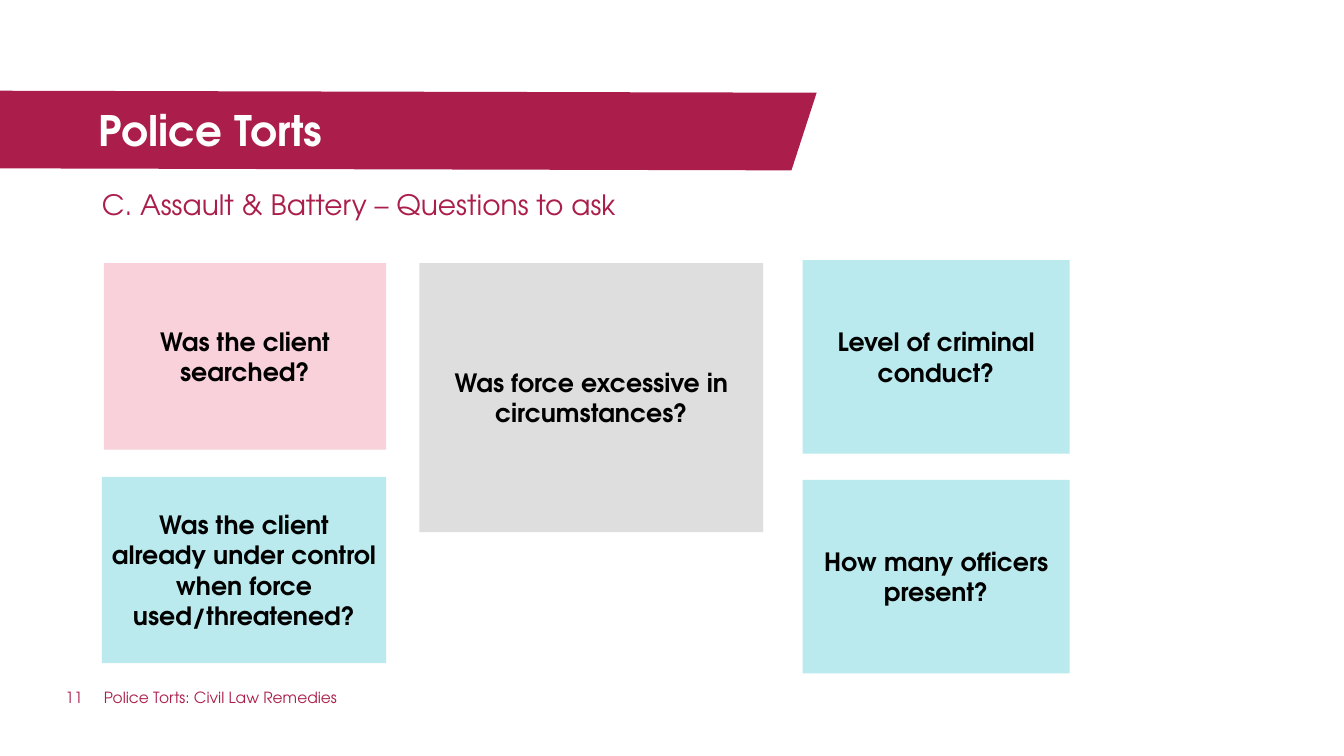
from dataclasses import dataclass

from pptx import Presentation
from pptx.dml.color import RGBColor
from pptx.enum import shapes, text
from pptx.util import Inches, Pt


@dataclass(frozen=True)
class Theme:
    font: str = "TeX Gyre Adventor"
    crimson: str = "AB1E4B"
    white: str = "FFFFFF"
    black: str = "000000"
    pink: str = "F8D1DA"
    aqua: str = "BAEAEE"
    grey: str = "DEDEDE"
    title_size: int = 30
    subtitle_size: int = 20
    card_size: int = 18
    footer_size: int = 11


@dataclass(frozen=True)
class Area:
    left: float
    top: float
    width: float
    height: float

    def lengths(self) -> list:
        return [Inches(n) for n in (self.left, self.top, self.width, self.height)]


@dataclass(frozen=True)
class Card:
    question: str
    area: Area
    fill: str


@dataclass(frozen=True)
class Footer:
    wording: str
    area: Area


THEME = Theme()
BAND = [(0, 0.9), (8.1, 0.92), (7.85, 1.69), (0, 1.67)]
TITLE_AREA = Area(0.98, 1.04, 6.82, 0.49)
SUBTITLE_AREA = Area(1.01, 1.79, 10.87, 0.47)
FOOTERS = [
    Footer("11", Area(0.65, 6.83, 0.37, 0.35)),
    Footer("Police Torts: Civil Law Remedies", Area(1.03, 6.83, 6.14, 0.35)),
]
CARDS = [
    Card("Was the client searched?", Area(1.03, 2.61, 2.8, 1.85), THEME.pink),
    Card("Level of criminal conduct?", Area(7.96, 2.58, 2.65, 1.92), THEME.aqua),
    Card("Was force excessive in circumstances?", Area(4.16, 2.61, 3.41, 2.67), THEME.grey),
    Card("Was the client already under control when force used/threatened?",
         Area(1.01, 4.73, 2.82, 1.85), THEME.aqua),
    Card("How many officers present?", Area(7.96, 4.76, 2.65, 1.92), THEME.aqua),
]


def place(shape, area: Area) -> None:
    shape.left, shape.top, shape.width, shape.height = area.lengths()


def paint(shape, colour: str) -> None:
    """Give a shape a flat fill with no outline or shadow."""
    shape.shadow.inherit = False
    shape.fill.solid()
    shape.fill.fore_color.rgb = RGBColor.from_string(colour)
    shape.line.fill.background()


def write(shape, wording: str, size: int, colour: str, bold: bool = False,
          align=text.PP_ALIGN.LEFT, anchor=text.MSO_ANCHOR.TOP, margin=None):
    """Fill a shape with one formatted paragraph and return the paragraph."""
    frame = shape.text_frame
    frame_format = {"word_wrap": True, "auto_size": text.MSO_AUTO_SIZE.NONE,
                    "vertical_anchor": anchor}
    if margin is not None:
        for side in ("left", "top", "right", "bottom"):
            frame_format[f"margin_{side}"] = Inches(margin)
    for name, value in frame_format.items():
        setattr(frame, name, value)
    para = frame.paragraphs[0]
    para.alignment = align
    span = para.add_run()
    span.text = wording
    for name, value in {"name": THEME.font, "size": Pt(size), "bold": bold}.items():
        setattr(span.font, name, value)
    span.font.color.rgb = RGBColor.from_string(colour)
    return para


def add_headings(page) -> None:
    title, subtitle = page.shapes.title, page.placeholders[1]
    place(title, TITLE_AREA)
    para = write(title, "Police Torts", THEME.title_size, THEME.white, bold=True,
                 anchor=text.MSO_ANCHOR.MIDDLE, margin=0)
    para.line_spacing = 1.0
    place(subtitle, SUBTITLE_AREA)
    para = write(subtitle, "C. Assault & Battery – Questions to ask",
                 THEME.subtitle_size, THEME.crimson, margin=0)
    para_format = {"line_spacing": 1.2, "space_before": Pt(0), "space_after": Pt(2)}
    for name, value in para_format.items():
        setattr(para, name, value)


def add_band(page) -> None:
    """Draw the slanted band behind the title."""
    start, *corners = [(Inches(x), Inches(y)) for x, y in BAND]
    builder = page.shapes.build_freeform(*start)
    builder.add_line_segments(corners, close=True)
    band = builder.convert_to_shape()
    paint(band, THEME.crimson)
    page.shapes.title.element.addprevious(band.element)


def add_footer(page, footer: Footer) -> None:
    box = page.shapes.add_textbox(*footer.area.lengths())
    write(box, footer.wording, THEME.footer_size, THEME.crimson, margin=0)


def add_card(page, card: Card) -> None:
    box = page.shapes.add_shape(shapes.MSO_SHAPE.RECTANGLE, *card.area.lengths())
    paint(box, card.fill)
    write(box, card.question, THEME.card_size, THEME.black, bold=True,
          align=text.PP_ALIGN.CENTER, anchor=text.MSO_ANCHOR.MIDDLE)


def main() -> None:
    deck = Presentation()
    deck.slide_width, deck.slide_height = Inches(13.33), Inches(7.5)
    page = deck.slides.add_slide(deck.slide_layouts[0])
    add_headings(page)
    add_band(page)
    for footer in FOOTERS:
        add_footer(page, footer)
    for card in CARDS:
        add_card(page, card)
    deck.save("out.pptx")


if __name__ == "__main__":
    main()
